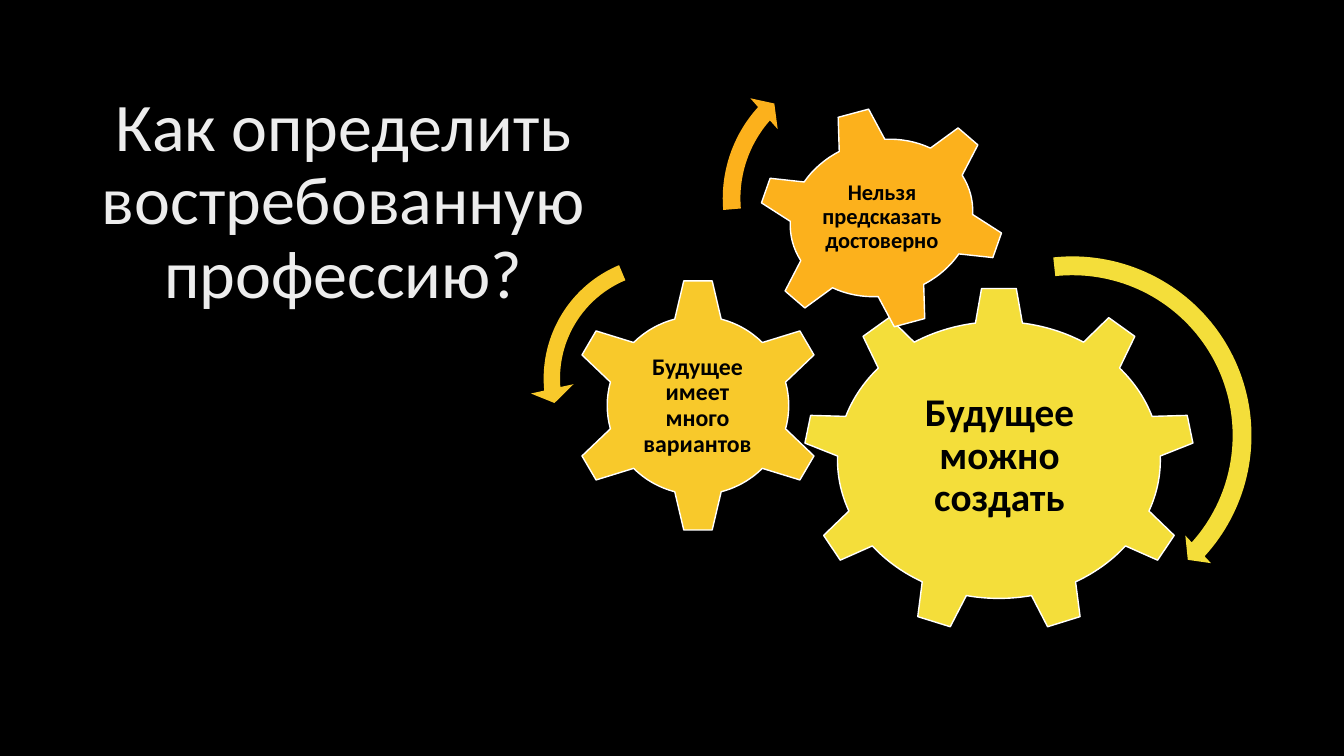
import pptx
import pptx.util
import pptx.dml.color
import pptx.enum.shapes
import pptx.enum.text

KIND = pptx.enum.shapes.MSO_SHAPE
SCALE = 914400 / 100.8  # EMU in one px
SIZE = (1344, 756)
FONT = "Calibri"
BLACK, WHITE, PALE = "000000", "FFFFFF", "EDEDED"
YELLOW, GOLD, ORANGE = "F4DE3A", "F8C92B", "FCB11C"

TITLE = ("Как определить востребованную профессию?", (-19, 97, 725, 211))

# kind, box, turn, fill, text, text box, text size, inset
GEARS = [
    (KIND.GEAR_9, (803, 287, 392, 346), 0, YELLOW,
     "Будущее можно создать", (879, 368, 241, 177), 28, 4),
    (KIND.GEAR_6, (569, 278, 258, 255), 0, GOLD,
     "Будущее имеет много вариантов", (633, 343, 129, 126), 17, 2),
    (KIND.GEAR_6, (756, 107, 251, 222), 345, ORANGE,
     "Нельзя предсказать достоверно", (813, 153, 138, 128), 16, 2),
]

# kind, box, fill, adjustments
ARROWS = [
    (KIND.CIRCULAR_ARROW, (884, 247, 377, 377), YELLOW,
     (0.05, 2.99, 25.3, 158.32, 0.05)),
    (KIND.LEFT_CIRCULAR_ARROW, (530, 242, 273, 273), GOLD,
     (0.06, 4.3, 104.89, 148.38, 0.08)),
    (KIND.CIRCULAR_ARROW, (711, 51, 295, 295), ORANGE,
     (0.06, 3.94, 133.14, 105.08, 0.07)),
]


def px(num):
    return pptx.util.Emu(round(num * SCALE))


def place(box):
    return [px(num) for num in box]


def paint(form, color):
    """Give a fill or a font colour a solid hex colour."""
    form.solid()
    form.fore_color.rgb = pptx.dml.color.RGBColor.from_string(color)


def write(shape, text, size, color, bold=False, inset=None):
    frame = shape.text_frame
    frame.word_wrap = True
    frame.auto_size = pptx.enum.text.MSO_AUTO_SIZE.NONE
    frame.vertical_anchor = pptx.enum.text.MSO_ANCHOR.MIDDLE
    if inset is not None:
        frame.margin_left = frame.margin_right = px(inset)
        frame.margin_top = frame.margin_bottom = px(inset)
    frame.text = text
    line = frame.paragraphs[0]
    line.alignment = pptx.enum.text.PP_ALIGN.CENTER
    line.line_spacing = 0.9
    font = line.runs[0].font
    font.name, font.size, font.bold = FONT, pptx.util.Pt(size), bold
    paint(font.fill, color)


def draw(slide, kind, box, fill, edge=None):
    shape = slide.shapes.add_shape(kind, *place(box))
    shape.shadow.inherit = False
    paint(shape.fill, fill)
    if edge:
        paint(shape.line.fill, edge)
        shape.line.width = pptx.util.Pt(1)
    else:
        shape.line.fill.background()
    return shape


def main():
    deck = pptx.Presentation()
    deck.slide_width, deck.slide_height = place(SIZE)
    slide = deck.slides.add_slide(deck.slide_layouts[5])
    paint(slide.background.fill, BLACK)

    text, box = TITLE
    title = slide.shapes.title
    title.left, title.top, title.width, title.height = place(box)
    write(title, text, 48.6, PALE)

    for kind, box, turn, fill, text, area, size, inset in GEARS:
        draw(slide, kind, box, fill, WHITE).rotation = turn
        label = slide.shapes.add_textbox(*place(area))
        write(label, text, size, BLACK, bold=True, inset=inset)

    for kind, box, fill, values in ARROWS:
        arrow = draw(slide, kind, box, fill)
        for i, value in enumerate(values):
            arrow.adjustments[i] = value

    deck.save("out.pptx")


if __name__ == "__main__":
    main()
